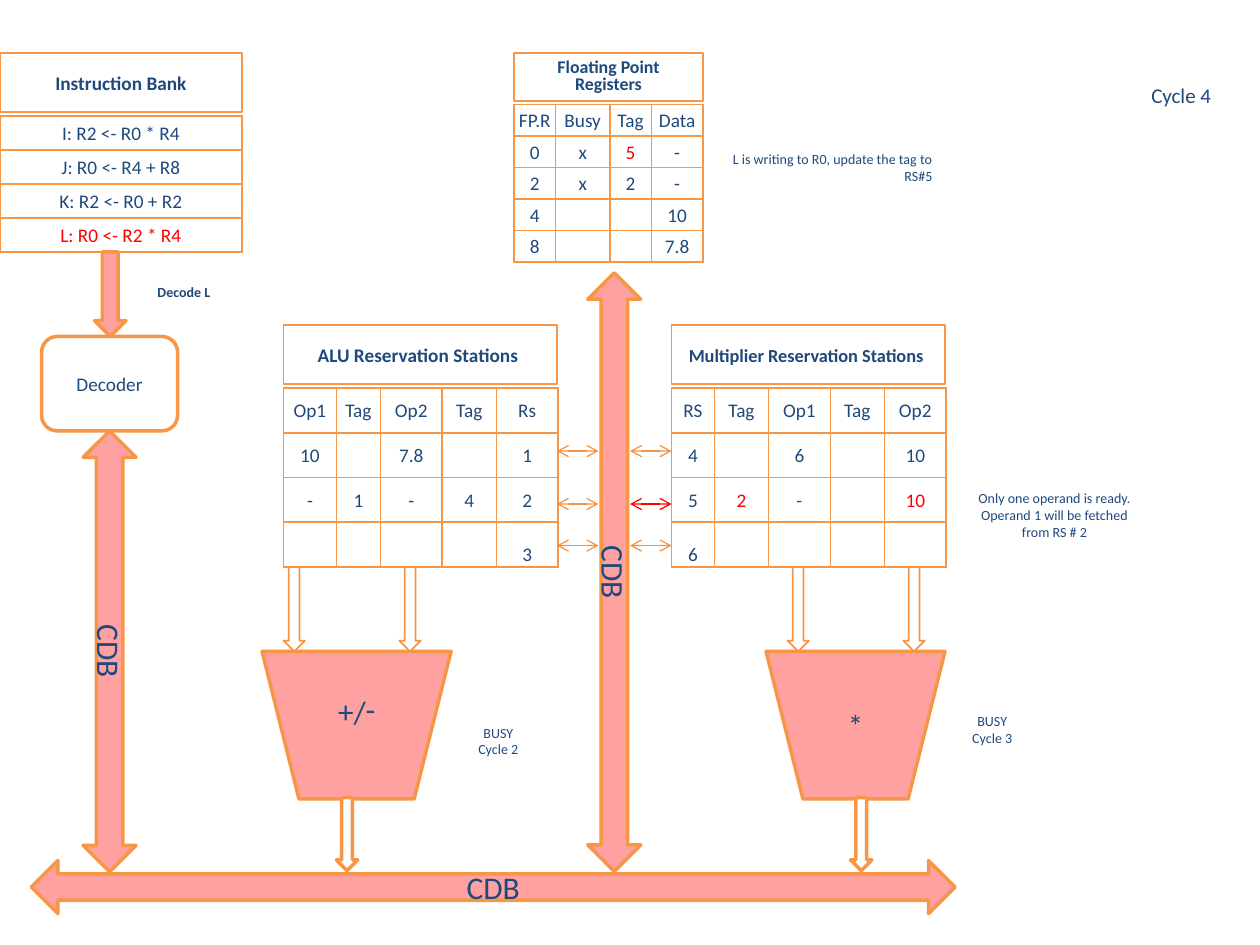
from lxml.etree import SubElement
from pptx import Presentation
from pptx.dml.color import RGBColor
from pptx.enum.shapes import MSO_CONNECTOR as Connector, MSO_SHAPE as Shape
from pptx.enum.text import MSO_ANCHOR as Anchor, MSO_AUTO_SIZE as AutoSize, PP_ALIGN as Align
from pptx.oxml.ns import qn
from pptx.util import Inches, Pt

COLORS = {"ink": "1F497D", "edge": "F79646", "link": "F69240", "red": "FF0000", "white": "FFFFFF"}
BUS_ALPHA = 37
FONT = "Calibri"


def color(name):
    """Return the named colour."""
    return RGBColor.from_string(COLORS[name])


def write(frame, text, size=11, bold=False, ink="ink", align=Align.CENTER, spacing=None):
    """Fill a text frame, one paragraph per line of text."""
    for index, line in enumerate(text.split("\n")):
        para = frame.paragraphs[0] if index == 0 else frame.add_paragraph()
        para.alignment = align
        if spacing:
            para.line_spacing = spacing
        span = para.add_run()
        span.text = line
        span.font.name, span.font.size, span.font.bold = FONT, Pt(size), bold
        span.font.color.rgb = color(ink)


def style_box(box, text="", fill="white", alpha=None, line=None, **format):
    """Give a shape its fill, outline and text."""
    box.fill.solid()
    box.fill.fore_color.rgb = color(fill)
    if alpha:
        paint = box._element.spPr.find(qn("a:solidFill"))[0]
        SubElement(paint, qn("a:alpha"), val=str(alpha * 1000))
    if line:
        box.line.color.rgb = color("edge")
        box.line.width = Pt(line)
    else:
        box.line.fill.background()
    frame = box.text_frame
    frame.word_wrap = True
    frame.auto_size = AutoSize.NONE
    frame.vertical_anchor = Anchor.MIDDLE
    if text:
        write(frame, text, **format)


def add_box(page, kind, left, top, width, height, text="", rotation=0, **format):
    """Add a preset shape without shadow."""
    box = page.shapes.add_shape(kind, Inches(left), Inches(top), Inches(width), Inches(height))
    box.shadow.inherit = False
    box.rotation = rotation
    style_box(box, text, **format)


def add_bus_part(page, kind, left, top, width, height, text="", **format):
    """Add a translucent red shape with a heavy outline."""
    add_box(page, kind, left, top, width, height, text,
            fill="red", alpha=BUS_ALPHA, line=2, size=18, **format)


def set_title(page, left, top, width, height, text, **format):
    """Move and format the title placeholder."""
    title = page.shapes.title
    title.left, title.top = Inches(left), Inches(top)
    title.width, title.height = Inches(width), Inches(height)
    style_box(title, text, **format)


def add_borders(cell):
    """Draw the four borders of a cell."""
    properties = cell._tc.get_or_add_tcPr()
    for index, side in enumerate(("lnL", "lnR", "lnT", "lnB")):
        line = SubElement(properties, qn(f"a:{side}"), w=str(Pt(1)))
        paint = SubElement(line, qn("a:solidFill"))
        SubElement(paint, qn("a:srgbClr"), val=COLORS["edge"])
        properties.insert(index, line)


def add_grid(page, left, top, height, columns, rows, red=(), low_row=None):
    """Add a bordered table with equal rows; red lists (row, column) cells."""
    frame = page.shapes.add_table(len(rows), len(columns), Inches(left), Inches(top),
                                  Inches(sum(columns)), Inches(height))
    table = frame.table
    table.first_row = table.horz_banding = False
    for column, width in zip(table.columns, columns):
        column.width = Inches(width)
    for r, values in enumerate(rows):
        table.rows[r].height = Inches(height / len(rows))
        for c, value in enumerate(values):
            cell = table.cell(r, c)
            cell.fill.background()
            cell.margin_left = cell.margin_right = cell.margin_top = Inches(0.01)
            cell.margin_bottom = 0
            cell.vertical_anchor = Anchor.BOTTOM if r == low_row else Anchor.MIDDLE
            add_borders(cell)
            if value:
                write(cell.text_frame, value, ink="red" if (r, c) in red else "ink")
            else:
                SubElement(cell.text_frame.paragraphs[0]._p, qn("a:endParaRPr"), sz="1100")


def add_link(page, left, right, y, ink="link"):
    """Add a thin horizontal line with an open arrowhead at each end."""
    link = page.shapes.add_connector(Connector.STRAIGHT, Inches(left), Inches(y),
                                     Inches(right), Inches(y))
    link.line.color.rgb = color(ink)
    link.line.width = Pt(0.75)
    properties = link._element.spPr
    line = properties.find(qn("a:ln"))
    for end in ("headEnd", "tailEnd"):
        SubElement(line, qn(f"a:{end}"), type="arrow")
    SubElement(properties, qn("a:effectLst"))


def add_tables(page):
    """Add the instruction, register and reservation station tables."""
    add_grid(page, 2.25, 3.08, 1.42, (0.42, 0.35, 0.49, 0.43, 0.49), [
        ("Op1", "Tag", "Op2", "Tag", "Rs"),
        ("10", "", "7.8", "", "1"),
        ("-", "1", "-", "4", "2"),
        ("", "", "", "", "3")], low_row=3)
    add_grid(page, 5.33, 3.08, 1.42, (0.34, 0.43, 0.49, 0.43, 0.49), [
        ("RS", "Tag", "Op1", "Tag", "Op2"),
        ("4", "", "6", "", "10"),
        ("5", "2", "-", "", "10"),
        ("6", "", "", "", "")], red={(2, 1), (2, 2), (2, 4)}, low_row=3)
    add_grid(page, 0, 0.92, 1.08, (1.92,), [
        ("I: R2 <- R0 * R4",), ("J: R0 <- R4 + R8",),
        ("K: R2 <- R0 + R2",), ("L: R0 <- R2 * R4",)], red={(3, 0)})
    add_grid(page, 4.08, 0.83, 1.25, (0.33, 0.43, 0.33, 0.41), [
        ("FP.R", "Busy", "Tag", "Data"),
        ("0", "x", "5", "-"),
        ("2", "x", "2", "-"),
        ("4", "", "", "10"),
        ("8", "", "", "7.8")], red={(1, 2)})


def add_headings(page):
    """Add the table headings and the decoder."""
    set_title(page, 5.33, 2.58, 2.17, 0.47, "Multiplier Reservation Stations ",
              line=1, size=10.5, bold=True)
    add_box(page, Shape.RECTANGLE, 2.25, 2.58, 2.17, 0.47, "ALU Reservation Stations ",
            line=1, bold=True)
    add_box(page, Shape.RECTANGLE, 4.08, 0.42, 1.5, 0.38, "Floating Point Registers",
            line=1, size=10.2, bold=True, spacing=0.8)
    add_box(page, Shape.RECTANGLE, 0, 0.42, 1.92, 0.47, "Instruction Bank", line=1, bold=True)
    add_box(page, Shape.ROUNDED_RECTANGLE, 0.33, 2.67, 1.08, 0.75, "Decoder", line=2)


def add_data_paths(page):
    """Add the buses, functional units and arrows between them."""
    add_bus_part(page, Shape.TRAPEZOID, 6.08, 5.17, 1.42, 1.17, "*", rotation=180)
    add_bus_part(page, Shape.TRAPEZOID, 2.08, 5.17, 1.5, 1.17, "-/+", rotation=180)
    add_bus_part(page, Shape.LEFT_RIGHT_ARROW, 2.5, 4.33, 4.75, 0.42, "CDB", rotation=90)
    add_bus_part(page, Shape.LEFT_RIGHT_ARROW, -0.88, 4.96, 3.5, 0.42, "CDB", rotation=90)
    add_bus_part(page, Shape.LEFT_RIGHT_ARROW, 0.25, 6.83, 7.33, 0.42, "CDB")
    add_bus_part(page, Shape.DOWN_ARROW, 0.75, 2, 0.25, 0.67)
    for left in (2.67, 6.75):
        add_box(page, Shape.DOWN_ARROW, left, 6.33, 0.17, 0.58, line=2)
    for left in (2.25, 3.17, 6.25, 7.17):
        add_box(page, Shape.DOWN_ARROW, left, 4.5, 0.17, 0.67, line=1)
    for y in (3.58, 4, 4.33):
        add_link(page, 4.42, 4.75, y)
        add_link(page, 5, 5.33, y, ink="red" if y == 4 else "link")


def add_notes(page):
    """Add the remarks around the diagram."""
    for left, top, width, height, text, format in (
        (7.58, 3.75, 1.58, 0.67,
         "Only one operand is ready. Operand 1 will be fetched from RS # 2", {}),
        (7.5, 5.58, 0.75, 0.42, "BUSY\nCycle 3", {}),
        (3.58, 5.67, 0.75, 0.42, "BUSY\nCycle 2", {}),
        (8.75, 0.42, 1.25, 0.67, "Cycle 4", {"size": 12}),
        (1, 2.17, 0.92, 0.3, "Decode L", {"bold": True}),
        (5.67, 1.08, 1.83, 0.5, "L is writing to R0, update the tag to RS#5",
         {"align": Align.RIGHT}),
    ):
        add_box(page, Shape.RECTANGLE, left, top, width, height, text, **{"size": 8, **format})


def main():
    """Build and save the slide."""
    deck = Presentation()
    deck.slide_width, deck.slide_height = Inches(10), Inches(7.5)
    page = deck.slides.add_slide(deck.slide_layouts[5])
    add_tables(page)
    add_headings(page)
    add_notes(page)
    add_data_paths(page)
    deck.save("out.pptx")


if __name__ == "__main__":
    main()
